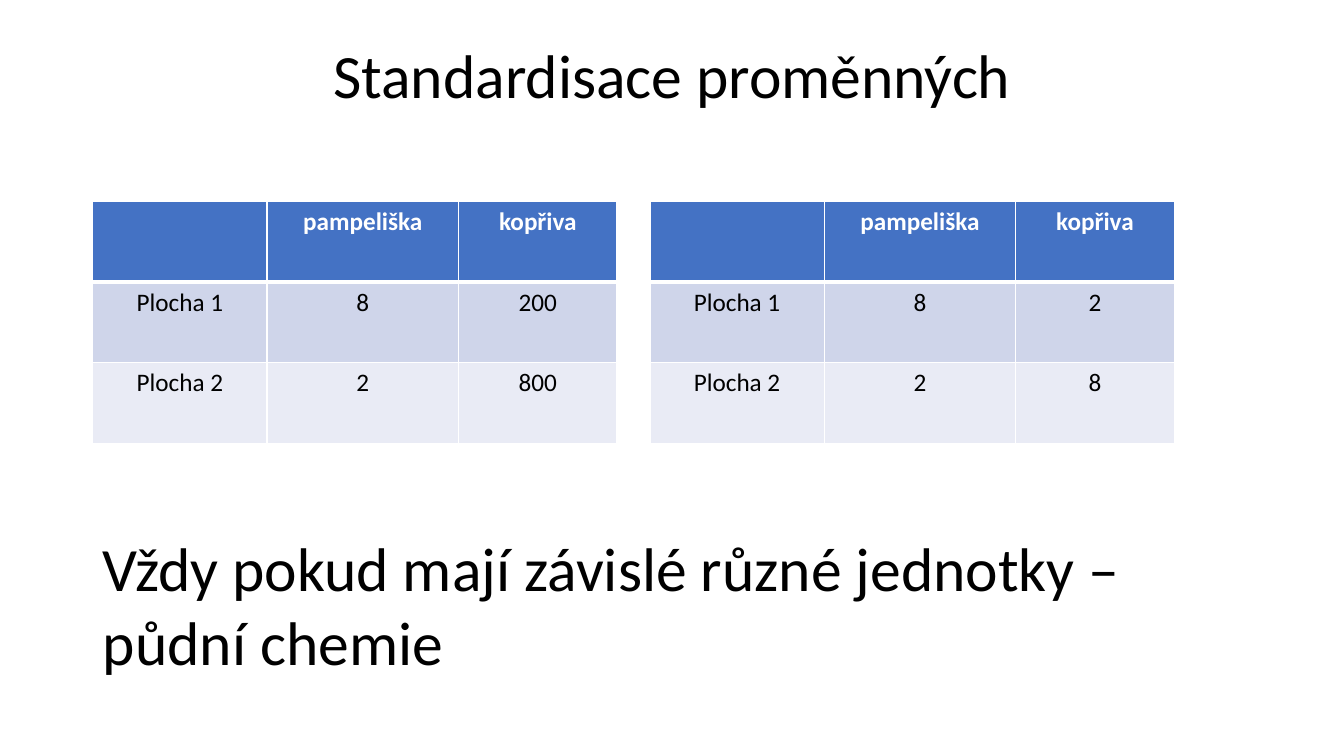
from dataclasses import dataclass
from lxml.etree import SubElement
from pptx import Presentation
from pptx.dml.color import RGBColor as Rgb
from pptx.enum.text import MSO_ANCHOR as Anchor, MSO_AUTO_SIZE as Fit, PP_ALIGN as Align
from pptx.oxml.ns import qn
from pptx.util import Cm, Pt

TITLE = "Standardisace proměnných"
NOTE = "Vždy pokud mají závislé různé jednotky – půdní chemie"
HEAD = ("", "pampeliška", "kopřiva")
TABLES = [
    [HEAD, ("Plocha 1", "8", "200"), ("Plocha 2", "2", "800")],
    [HEAD, ("Plocha 1", "8", "2"), ("Plocha 2", "2", "8")],
]


@dataclass(frozen=True)
class Theme:
    font: str = "Calibri"
    large: int = 44
    small: int = 18
    black: str = "000000"
    white: str = "FFFFFF"
    fills: tuple = ("4472C4", "CFD5EA", "E9EBF5")
    thin: int = 1
    thick: int = 3


LOOK = Theme()
LEFT, TOP = 2.34, 5.08
COLS = (4.39, 4.83, 3.99)
ROW = 2.03
GAP = 0.83


def style(para, size, color, align=Align.LEFT, bold=False):
    para.alignment = align
    font = para.font
    font.name, font.size, font.bold = LOOK.font, Pt(size), bold
    font.color.rgb = Rgb.from_string(color)


def border(cell, row):
    props = cell._tc.get_or_add_tcPr()
    heavy = {0: "B", 1: "T"}.get(row)
    for side in "LRTB":
        width = LOOK.thick if side == heavy else LOOK.thin
        line = SubElement(props, qn(f"a:ln{side}"), w=str(Pt(width)))
        fill = SubElement(line, qn("a:solidFill"))
        SubElement(fill, qn("a:srgbClr"), val=LOOK.white)


def add_grid(slide, data, left):
    frame = slide.shapes.add_table(len(data), len(COLS), Cm(left), Cm(TOP),
                                   Cm(sum(COLS)), Cm(ROW * len(data)))
    table = frame.table
    for col, width in zip(table.columns, COLS):
        col.width = Cm(width)
    for r, texts in enumerate(data):
        table.rows[r].height = Cm(ROW)
        color = LOOK.black if r else LOOK.white
        for c, text in enumerate(texts):
            cell = table.cell(r, c)
            cell.text = text
            style(cell.text_frame.paragraphs[0], LOOK.small, color, Align.CENTER, r == 0)
            border(cell, r)
            cell.fill.solid()
            cell.fill.fore_color.rgb = Rgb.from_string(LOOK.fills[r])


def main():
    deck = Presentation()
    deck.slide_width, deck.slide_height = Cm(33.87), Cm(19.05)
    slide = deck.slides.add_slide(deck.slide_layouts[5])

    title = slide.shapes.title
    title.left, title.top, title.width, title.height = Cm(LEFT), Cm(1.02), Cm(29.21), Cm(3.68)
    frame = title.text_frame
    frame.text = TITLE
    frame.auto_size, frame.vertical_anchor = Fit.NONE, Anchor.TOP
    frame.paragraphs[0].line_spacing = 0.9
    style(frame.paragraphs[0], LOOK.large, LOOK.black, Align.CENTER)

    for i, data in enumerate(TABLES):
        add_grid(slide, data, LEFT + i * (sum(COLS) + GAP))

    note = slide.shapes.add_textbox(Cm(LEFT), Cm(13.23), Cm(29.97), Cm(4.01)).text_frame
    note.word_wrap = True
    note.auto_size = Fit.SHAPE_TO_FIT_TEXT
    note.text = NOTE
    style(note.paragraphs[0], LOOK.large, LOOK.black)

    deck.save("out.pptx")


if __name__ == "__main__":
    main()
